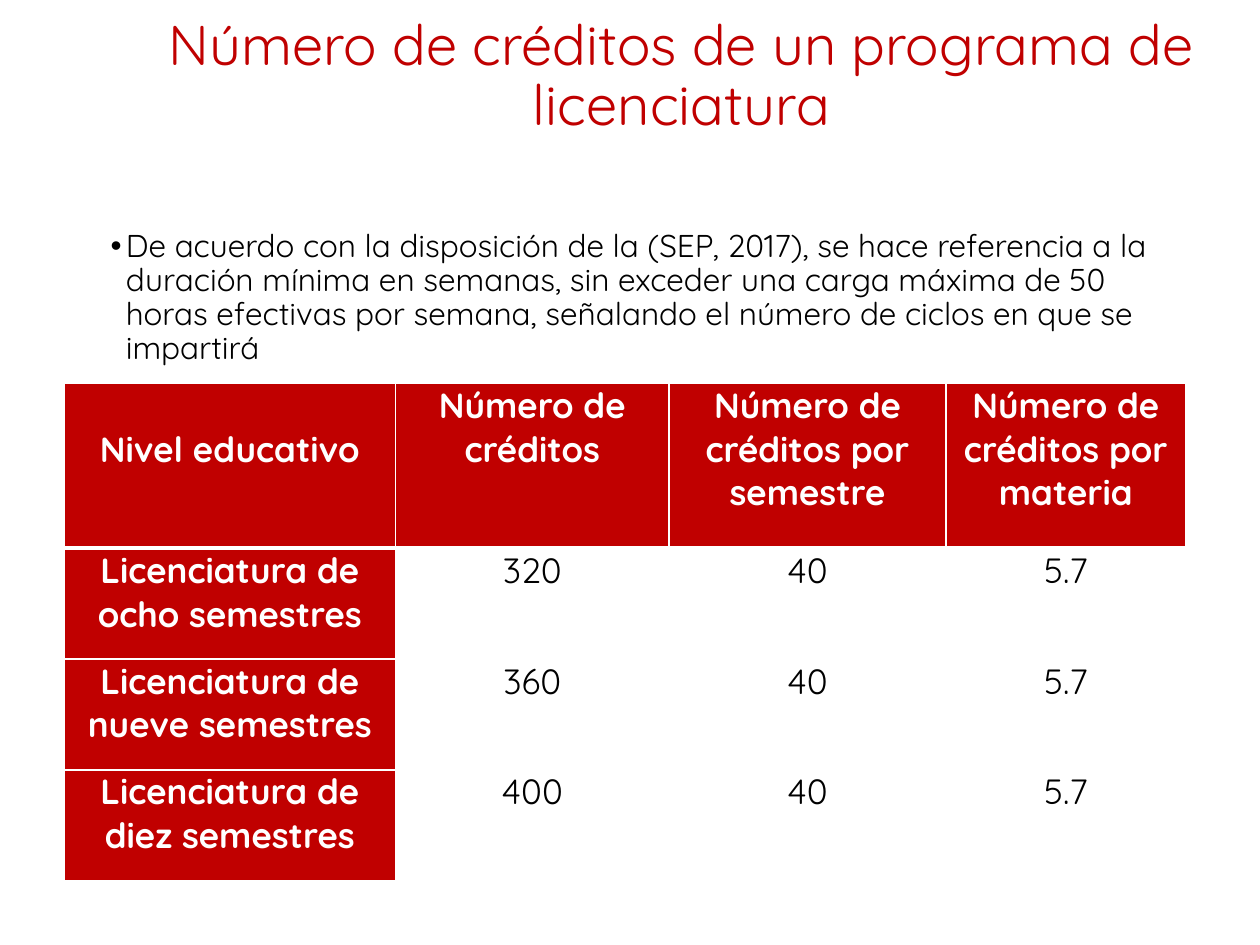
from lxml import etree
from pptx import Presentation
from pptx.dml.color import RGBColor
from pptx.enum.text import MSO_ANCHOR, PP_ALIGN
from pptx.oxml.ns import qn
from pptx.util import Inches, Pt

CENTER, LEFT = PP_ALIGN.CENTER, PP_ALIGN.LEFT
TOP, MIDDLE = MSO_ANCHOR.TOP, MSO_ANCHOR.MIDDLE
FONT = "Quicksand"
RED, WHITE, BLACK = "C00000", "FFFFFF", "000000"

TITLE = "Número de créditos de un programa de licenciatura"
INTRO = (
    "De acuerdo con la disposición de la (SEP, 2017), se hace referencia a la "
    "duración mínima en semanas, sin exceder una carga máxima de 50 horas "
    "efectivas por semana, señalando el número de ciclos en que se impartirá"
)
CREDITS = [
    ["Nivel educativo", "Número de créditos",
     "Número de créditos por semestre", "Número de créditos por materia"],
    ["Licenciatura de ocho semestres", "320", "40", "5.7"],
    ["Licenciatura de nueve semestres", "360", "40", "5.7"],
    ["Licenciatura de diez semestres", "400", "40", "5.7"],
]
COLUMN_WIDTHS = [2.63, 2.17, 2.2, 1.9]
ROW_HEIGHTS = [1.31, 0.88, 0.88, 0.88]


def color(value):
    return RGBColor.from_string(value)


def add_run(paragraph, text, size, text_color, bold=False):
    run = paragraph.add_run()
    run.text = text
    run.font.name = FONT
    run.font.size = Pt(size)
    run.font.bold = bold
    run.font.color.rgb = color(text_color)


def add_text(slide, box, text, size, text_color, align, anchor):
    frame = slide.shapes.add_textbox(*map(Inches, box)).text_frame
    frame.word_wrap = True
    frame.vertical_anchor = anchor
    paragraph = frame.paragraphs[0]
    paragraph.alignment = align
    paragraph.line_spacing = 0.9
    add_run(paragraph, text, size, text_color)
    return paragraph


def add_bullet(paragraph, indent):
    properties = paragraph._p.get_or_add_pPr()
    properties.set("marL", str(Inches(indent)))
    properties.set("indent", str(-Inches(indent)))
    etree.SubElement(properties, qn("a:buFont")).set("typeface", "Arial")
    etree.SubElement(properties, qn("a:buChar")).set("char", "•")


def set_borders(cell, widths):
    properties = cell._tc.get_or_add_tcPr()
    for side, width in zip("LRTB", widths):
        line = etree.SubElement(properties, qn(f"a:ln{side}"), w=str(Pt(width)))
        fill = etree.SubElement(line, qn("a:solidFill"))
        etree.SubElement(fill, qn("a:srgbClr"), val=WHITE)


def fill_cell(cell, text, is_heading, border_widths):
    set_borders(cell, border_widths)
    cell.fill.solid()
    cell.fill.fore_color.rgb = color(RED if is_heading else WHITE)
    cell.margin_left = cell.margin_right = Inches(0.07)
    cell.margin_top = cell.margin_bottom = 0
    paragraph = cell.text_frame.paragraphs[0]
    paragraph.alignment = CENTER
    add_run(paragraph, text, 20, WHITE if is_heading else BLACK, is_heading)


def add_credit_table(slide, left, top):
    table = slide.shapes.add_table(
        len(CREDITS), len(COLUMN_WIDTHS), Inches(left), Inches(top),
        Inches(sum(COLUMN_WIDTHS)), Inches(sum(ROW_HEIGHTS))).table
    for column, width in zip(table.columns, COLUMN_WIDTHS):
        column.width = Inches(width)
    for row, height in zip(table.rows, ROW_HEIGHTS):
        row.height = Inches(height)
    for r, values in enumerate(CREDITS):
        border_widths = (1, 1, 3 if r == 1 else 1, 3 if r == 0 else 1)
        for c, value in enumerate(values):
            fill_cell(table.cell(r, c), value, r == 0 or c == 0, border_widths)
    table.cell(0, 0).margin_top = Inches(0.35)


def main():
    presentation = Presentation()
    presentation.slide_width = Inches(10)
    presentation.slide_height = Inches(7.5)
    slide = presentation.slides.add_slide(presentation.slide_layouts[6])
    add_text(slide, (1.1, -0.11, 8.62, 1.45), TITLE, 32, RED, CENTER, MIDDLE)
    intro = add_text(slide, (0.78, 1.78, 8.62, 4.76), INTRO, 18, BLACK, LEFT, TOP)
    add_bullet(intro, 0.12)
    add_credit_table(slide, 0.51, 3.04)
    presentation.save("out.pptx")


if __name__ == "__main__":
    main()
